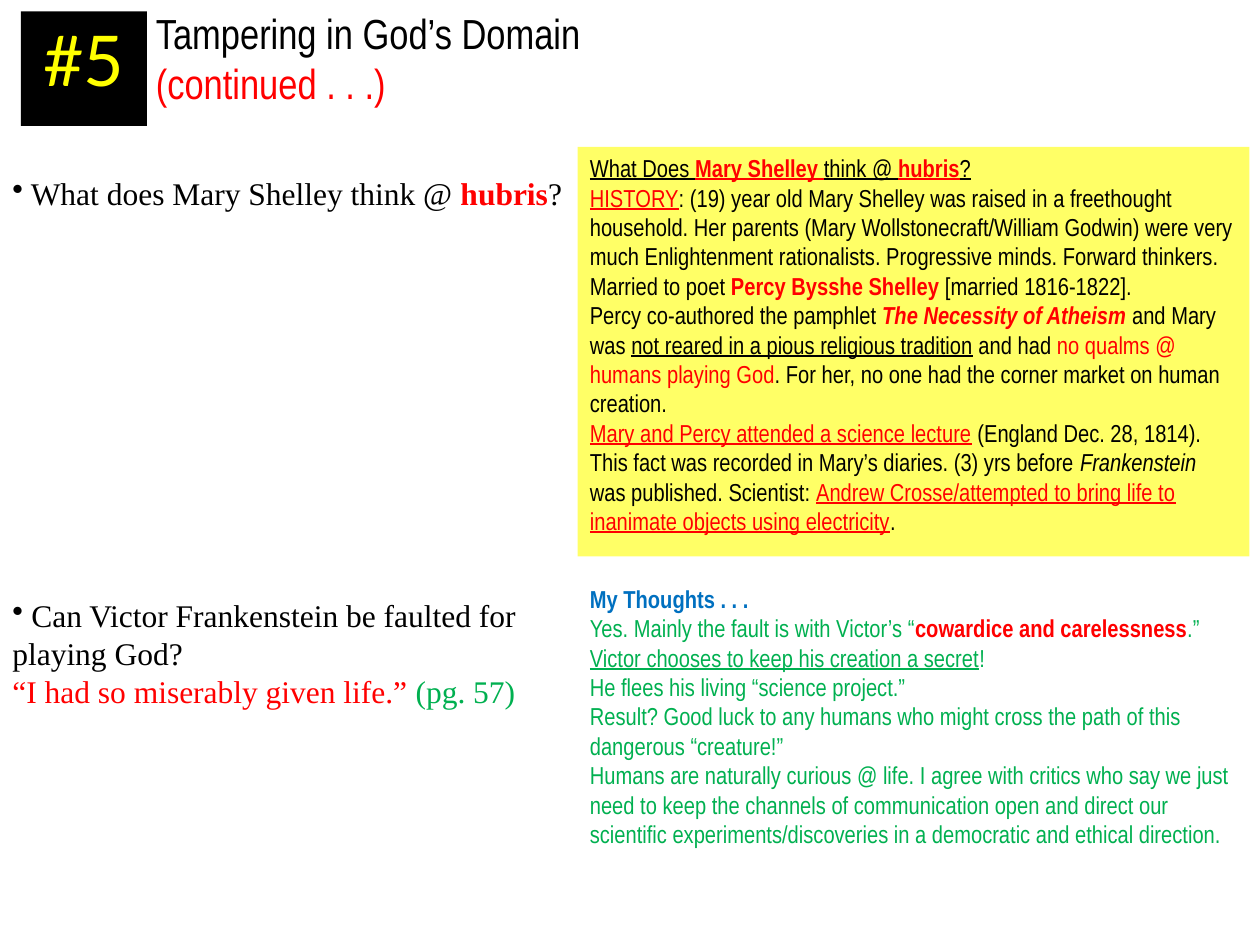
from dataclasses import dataclass

from lxml.etree import SubElement
from pptx import Presentation
from pptx.dml.color import RGBColor
from pptx.enum.shapes import MSO_SHAPE as Preset
from pptx.enum.text import MSO_AUTO_SIZE as AutoSize, PP_ALIGN as Align
from pptx.oxml.ns import qn
from pptx.util import Pt


@dataclass(frozen=True)
class Theme:
    black: str = "000000"
    red: str = "FF0000"
    green: str = "00B050"
    blue: str = "0070C0"
    yellow: str = "FFFF00"
    panel: str = "FFFF66"
    narrow: str = "Arial Narrow"
    serif: str = "Times New Roman"
    badge_font: str = "Lato"
    badge_size: int = 40
    title_size: int = 24
    question_size: int = 18
    note_size: int = 14


THEME = Theme()


@dataclass(frozen=True)
class Area:
    left: float
    top: float
    width: float
    height: float

    def lengths(self) -> list:
        return [Pt(value) for value in (self.left, self.top, self.width, self.height)]


@dataclass(frozen=True)
class Span:
    text: str
    color: str = THEME.black
    style: str = ""  # any of b (bold), i (italic), u (underline)


@dataclass(frozen=True)
class Para:
    spans: tuple
    bullet: bool = False


@dataclass(frozen=True)
class TextBlock:
    area: Area
    font: str
    size: int
    paras: tuple
    align: Align = Align.LEFT
    wrap: bool = True


def line(*spans: Span, bullet: bool = False) -> Para:
    return Para(spans, bullet)


def plain(text: str) -> Span:
    return Span(text)


def red(text: str, style: str = "") -> Span:
    return Span(text, THEME.red, style)


def green(text: str, style: str = "") -> Span:
    return Span(text, THEME.green, style)


def add_panel(shapes, area: Area, color: str) -> None:
    panel = shapes.add_shape(Preset.RECTANGLE, *area.lengths())
    panel.shadow.inherit = False
    panel.fill.solid()
    panel.fill.fore_color.rgb = RGBColor.from_string(color)
    panel.line.fill.background()


def add_text(shapes, block: TextBlock) -> None:
    frame = shapes.add_textbox(*block.area.lengths()).text_frame
    frame.word_wrap = block.wrap
    frame.auto_size = AutoSize.SHAPE_TO_FIT_TEXT
    for index, content in enumerate(block.paras):
        para = frame.paragraphs[0] if index == 0 else frame.add_paragraph()
        para.alignment = block.align
        if content.bullet:
            SubElement(para._p.get_or_add_pPr(), qn("a:buChar"), char="•")
        for span in content.spans:
            run = para.add_run()
            run.text = span.text
            formats = {
                "name": block.font,
                "size": Pt(block.size),
                "bold": "b" in span.style,
                "italic": "i" in span.style,
                "underline": "u" in span.style,
            }
            for name, value in formats.items():
                setattr(run.font, name, value)
            run.font.color.rgb = RGBColor.from_string(span.color)


NOTE_LEFT, NOTE_WIDTH = 330, 390
QUESTION_WIDTH = 360

HISTORY_PANEL = Area(NOTE_LEFT, 84, 384, 234)
HISTORY = TextBlock(
    Area(NOTE_LEFT, 84, NOTE_WIDTH, 227.5), THEME.narrow, THEME.note_size,
    (
        line(Span("What Does ", style="u"), red("Mary Shelley ", "bu"),
             Span("think @ ", style="u"), red("hubris", "bu"), Span("?", style="u")),
        line(red("HISTORY", "u"),
             plain(": (19) year old Mary Shelley was raised in a freethought household. "
                   "Her parents (Mary Wollstonecraft/William Godwin) were very much "
                   "Enlightenment rationalists. Progressive minds. Forward thinkers.")),
        line(plain("Married to poet "), red("Percy Bysshe Shelley ", "b"),
             plain("[married 1816-1822].")),
        line(plain("Percy co-authored the pamphlet "),
             red("The Necessity of Atheism ", "bi"), plain("and Mary")),
        line(plain("was "), Span("not reared in a pious religious tradition", style="u"),
             plain(" and had "), red("no qualms @")),
        line(red("humans playing God"),
             plain(". For her, no one had the corner market on human creation.")),
        line(red("Mary and Percy attended a science lecture", "u"),
             plain(" (England Dec. 28, 1814).")),
        line(plain("This fact was recorded in Mary’s diaries. (3) yrs before "),
             Span("Frankenstein", style="i")),
        line(plain("was published. Scientist: "),
             red("Andrew Crosse/attempted to bring life to", "u")),
        line(red("inanimate objects using electricity", "u"), plain(".")),
    ),
)
TITLE = TextBlock(
    Area(82, 0.7, 260, 65.5), THEME.narrow, THEME.title_size,
    (line(plain("Tampering in God’s Domain")), line(red("(continued . . .)"))),
    wrap=False,
)
BADGE_PANEL = Area(12, 6.5, 72, 65.5)
BADGE = TextBlock(
    Area(0, 6, 96, 78), THEME.badge_font, THEME.badge_size,
    (line(Span("#5", THEME.yellow)),), Align.CENTER,
)
HUBRIS_QUESTION = TextBlock(
    Area(0, 96, QUESTION_WIDTH, 29), THEME.serif, THEME.question_size,
    (line(plain(" What does Mary Shelley think @ "), red("hubris", "b"), plain("?"),
          bullet=True),),
)
VICTOR_QUESTION = TextBlock(
    Area(0, 337, QUESTION_WIDTH, 73), THEME.serif, THEME.question_size,
    (
        line(plain(" Can Victor Frankenstein be faulted for"), bullet=True),
        line(plain("playing God?")),
        line(red("“I had so miserably given life.” "), green("(pg. 57)")),
    ),
)
THOUGHTS = TextBlock(
    Area(NOTE_LEFT, 330, NOTE_WIDTH, 160), THEME.narrow, THEME.note_size,
    (
        line(Span("My Thoughts . . .", THEME.blue, "b")),
        line(green("Yes. Mainly the fault is with Victor’s “"),
             red("cowardice and carelessness", "b"), green(".”")),
        line(green("Victor chooses to keep his creation a secret", "u"), green("!")),
        line(green("He flees his living “science project.”")),
        line(green("Result? Good luck to any humans who might cross the path of this")),
        line(green("dangerous “creature!”")),
        line(green("Humans are naturally curious @ life. I agree with critics who say we "
                   "just need to keep the channels of communication open and direct our "
                   "scientific experiments/discoveries in a democratic and ethical "
                   "direction.")),
    ),
)


def main() -> None:
    deck = Presentation()
    deck.slide_width, deck.slide_height = Pt(720), Pt(540)
    page = deck.slides.add_slide(deck.slide_layouts[6])

    add_panel(page.shapes, HISTORY_PANEL, THEME.panel)
    add_text(page.shapes, HISTORY)
    add_text(page.shapes, TITLE)

    badge = page.shapes.add_group_shape()
    add_panel(badge.shapes, BADGE_PANEL, THEME.black)
    add_text(badge.shapes, BADGE)

    for block in (HUBRIS_QUESTION, VICTOR_QUESTION, THOUGHTS):
        add_text(page.shapes, block)

    deck.save("out.pptx")


if __name__ == "__main__":
    main()
